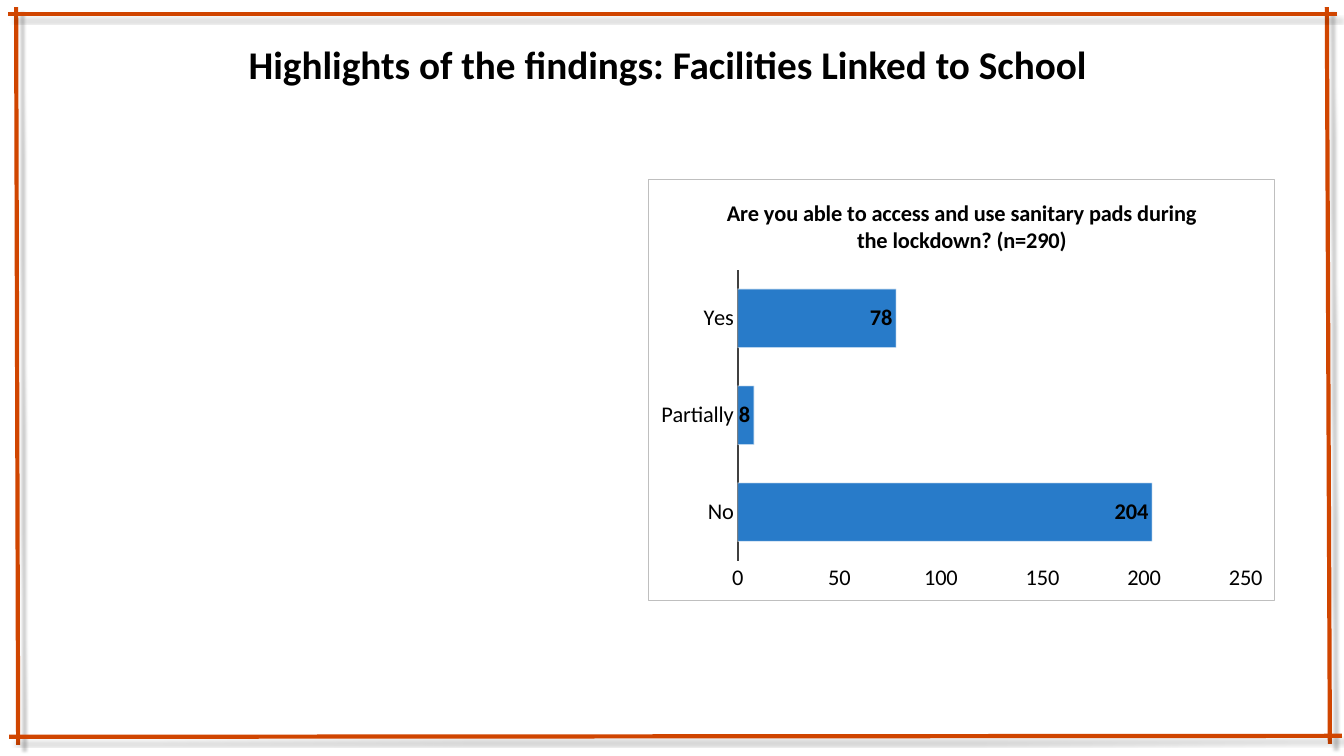
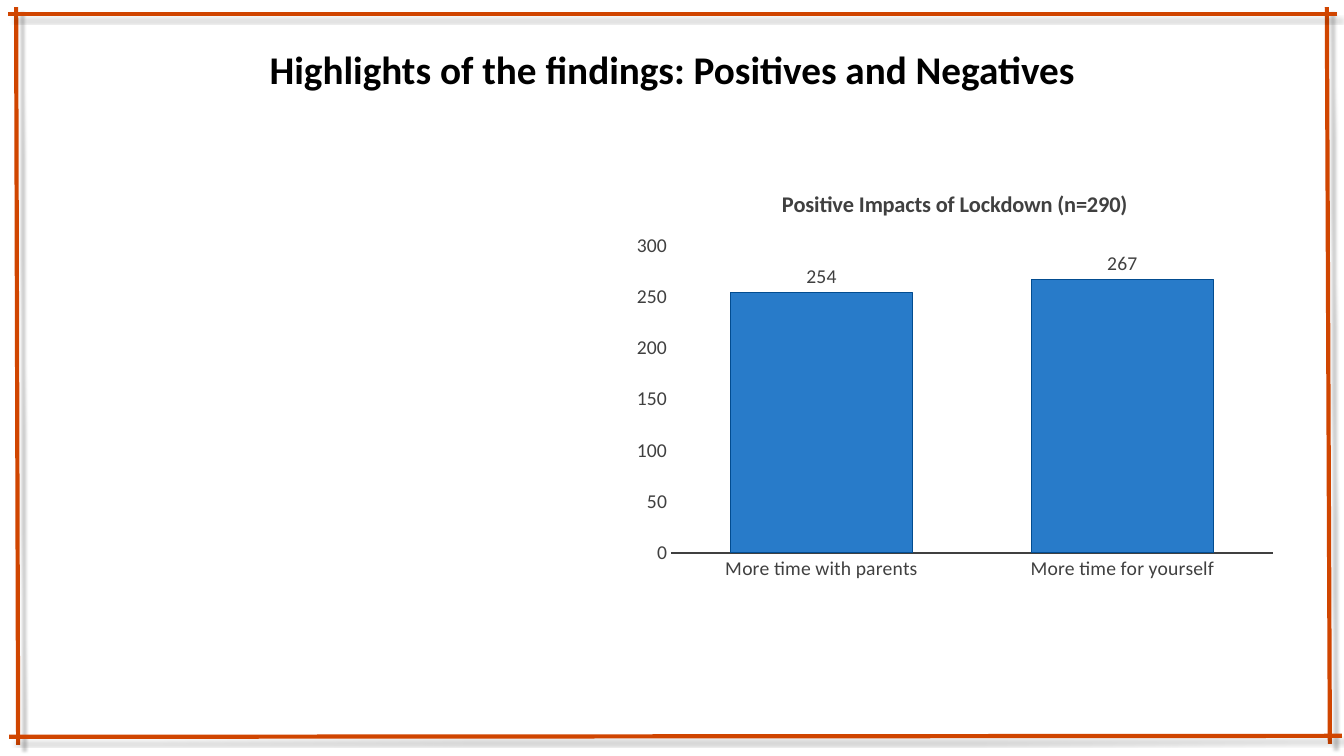
"""Two survey slides with a shared ruled frame and one chart each."""
from dataclasses import dataclass

from lxml.etree import SubElement
from pptx import Presentation
from pptx.chart.data import CategoryChartData as ChartData
from pptx.dml.color import RGBColor as Rgb
from pptx.enum.chart import XL_CHART_TYPE as Kind, XL_LABEL_POSITION as Spot
from pptx.enum.chart import XL_TICK_MARK as Tick
from pptx.enum.shapes import MSO_CONNECTOR as Link
from pptx.enum.text import MSO_ANCHOR as Anchor, PP_ALIGN as Align
from pptx.oxml import parse_xml
from pptx.oxml.ns import nsdecls, qn
from pptx.util import Pt

PX = 9144
SIZE = (1333, 750)
RULES = [(16, 7, 18, 739), (1316, 7, 1319, 738),
         (9, 731, 1331, 730), (8, 14, 1326, 14)]


@dataclass(frozen=True)
class Theme:
    font: str = "Calibri"
    rule: str = "D04500"
    bar: str = "0365C0"
    edge: str = "024C90"
    black: str = "000000"
    grey: str = "404040"
    pale: str = "BFBFBF"
    white: str = "FFFFFF"
    head: int = 28
    label: int = 16
    small: int = 14


THEME = Theme()


def px(*vals):
    return [val * PX for val in vals]


def style(font, size, color, bold=False):
    font.name, font.size, font.bold = THEME.font, Pt(size), bold
    font.color.rgb = Rgb.from_string(color)


def stroke(line, color, width):
    line.color.rgb = Rgb.from_string(color)
    line.width = Pt(width)


def fade(part, percent):
    for color in part.iter(qn("a:srgbClr")):
        SubElement(color, qn("a:alpha"), val=str(percent * 1000))


def add_frame(slide):
    """Draw the rules and move them to the layout that all slides share."""
    layout = slide.slide_layout
    for holder in list(layout.placeholders):
        layout.shapes.element.remove(holder.element)
    rules = [slide.shapes.add_connector(Link.STRAIGHT, *px(*ends)) for ends in RULES]
    for rule in rules:
        stroke(rule.line, THEME.rule, 3)
        glow = SubElement(rule.element.spPr, qn("a:effectLst"))
        shade = SubElement(glow, qn("a:outerShdw"), blurRad=str(Pt(2)),
                           dist=str(Pt(6)), dir="2700000", rotWithShape="0")
        SubElement(shade, qn("a:srgbClr"), val=THEME.black)
        fade(shade, 20)
        layout.shapes.element.append(rule.element)


def add_title(slide, text, top):
    frame = slide.shapes.add_textbox(*px(130, top, 1073, 87)).text_frame
    frame.word_wrap = True
    frame.vertical_anchor = Anchor.BOTTOM
    frame.margin_left = frame.margin_right = 0
    frame.margin_top = frame.margin_bottom = 0
    para = frame.paragraphs[0]
    para.text, para.alignment = text, Align.CENTER
    style(para.font, THEME.head, THEME.black, True)


def set_border(chart, color):
    box = parse_xml(
        f'<c:spPr {nsdecls("c", "a")}>'
        f'<a:solidFill><a:srgbClr val="{THEME.white}"/></a:solidFill>'
        f'<a:ln w="{Pt(0.75)}"><a:solidFill><a:srgbClr val="{color}"/>'
        '</a:solidFill></a:ln></c:spPr>')
    chart.element.find(qn("c:chart")).addnext(box)


def set_axes(chart, size, color):
    for axis in (chart.category_axis, chart.value_axis):
        axis.major_tick_mark = axis.minor_tick_mark = Tick.NONE
        axis.has_major_gridlines = False
        style(axis.tick_labels.font, size, color)
    stroke(chart.category_axis.format.line, THEME.grey, 1.5)
    chart.value_axis.format.line.fill.background()
    chart.value_axis.minimum_scale = 0


def add_bars(slide, kind, area, title, data, size, color, border):
    """Add a one-series bar chart and return its series and data labels."""
    table = ChartData()
    table.categories = list(data)
    table.add_series("Series 1", list(data.values()))
    chart = slide.shapes.add_chart(kind, *px(*area), table).chart
    style(chart.font, size, THEME.black)
    set_border(chart, border)
    chart.has_legend = False
    chart.chart_title.include_in_layout = False
    para = chart.chart_title.text_frame.paragraphs[0]
    para.text = title
    style(para.font, THEME.label, color, True)
    set_axes(chart, size, color)
    plot = chart.plots[0]
    plot.gap_width, plot.vary_by_categories = 65, False
    bars = plot.series[0]
    bars.format.fill.solid()
    bars.format.fill.fore_color.rgb = Rgb.from_string(THEME.bar)
    fade(bars.format.fill._xPr, 85)
    labels = bars.data_labels
    labels.show_value = True
    return bars, labels


def add_pads(slide):
    add_title(slide, "Highlights of the findings: Facilities Linked to School ", 0)
    bars, labels = add_bars(
        slide, Kind.BAR_CLUSTERED, (643, 178, 622, 418),
        "Are you able to access and use sanitary pads during the lockdown? (n=290)",
        {"No": 204, "Partially": 8, "Yes": 78},
        THEME.label, THEME.black, THEME.pale)
    stroke(bars.format.line, THEME.white, 0.75)
    fade(bars.format.line._ln, 50)
    labels.position = Spot.INSIDE_END
    style(labels.font, THEME.label, THEME.black, True)


def add_gains(slide):
    add_title(slide, "Highlights of the findings: Positives and Negatives", 5)
    bars, labels = add_bars(
        slide, Kind.COLUMN_CLUSTERED, (618, 169, 658, 416),
        "Positive Impacts of Lockdown (n=290)",
        {"More time with parents": 254, "More time for yourself": 267},
        THEME.small, THEME.grey, THEME.white)
    stroke(bars.format.line, THEME.edge, 0.75)
    labels.position = Spot.OUTSIDE_END
    style(labels.font, THEME.small, THEME.grey)


def main():
    deck = Presentation()
    deck.slide_width, deck.slide_height = px(*SIZE)
    blank = deck.slide_layouts[6]
    pads, gains = [deck.slides.add_slide(blank) for _ in range(2)]
    add_frame(pads)
    add_pads(pads)
    add_gains(gains)
    deck.save("out.pptx")


if __name__ == "__main__":
    main()
